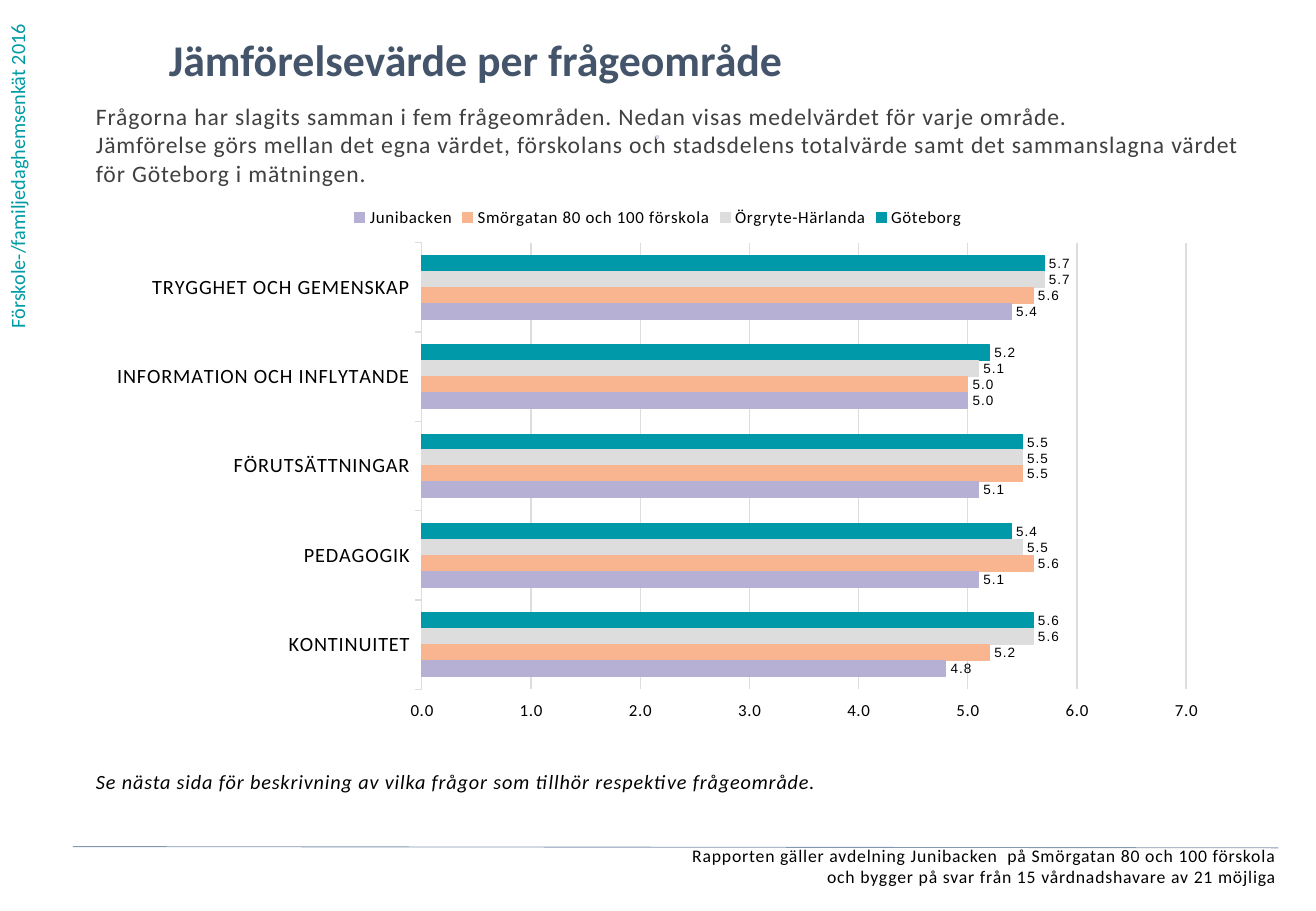
from dataclasses import dataclass

from lxml.etree import SubElement
from pptx import Presentation
from pptx.chart.data import CategoryChartData
from pptx.dml.color import RGBColor
from pptx.enum.chart import (XL_CHART_TYPE, XL_LABEL_POSITION, XL_LEGEND_POSITION,
                             XL_TICK_LABEL_POSITION, XL_TICK_MARK)
from pptx.enum.shapes import MSO_CONNECTOR
from pptx.enum.text import MSO_ANCHOR, PP_ALIGN
from pptx.oxml import parse_xml
from pptx.oxml.ns import nsdecls, qn
from pptx.util import Inches, Pt


@dataclass(frozen=True)
class Theme:
    font: str = "Calibri"
    label_font: str = "Arial"
    title: str = "44546A"
    body: str = "404040"
    black: str = "000000"
    accent: str = "009BA4"
    dot: str = "D2D9E2"
    rule: str = "8497B0"
    grid: str = "DDDDDD"
    title_size: float = 26
    intro_size: float = 14
    text_size: float = 12
    footer_size: float = 10.5
    chart_size: float = 10
    label_size: float = 8
    spacing: int = 50  # hundredths of a point


THEME = Theme()
PAGE_WIDTH, PAGE_HEIGHT = Inches(10.83), Inches(7.5)
TEXT_LEFT = 7.29

AREAS = ["TRYGGHET OCH GEMENSKAP", "INFORMATION OCH INFLYTANDE",
         "FÖRUTSÄTTNINGAR", "PEDAGOGIK", "KONTINUITET"]
SERIES = [
    ("Göteborg", "0099AA", (5.7, 5.2, 5.5, 5.4, 5.6)),
    ("Örgryte-Härlanda", "DDDDDD", (5.7, 5.1, 5.5, 5.5, 5.6)),
    ("Smörgatan 80 och 100 förskola", "F9B590", (5.6, 5.0, 5.5, 5.6, 5.2)),
    ("Junibacken", "B6B1D4", (5.4, 5.0, 5.1, 5.1, 4.8)),
]


def across(percent):
    return round(PAGE_WIDTH * percent / 100)


def down(percent):
    return round(PAGE_HEIGHT * percent / 100)


def place(left, top, width, height):
    """Turn percentages of the page into lengths."""
    return across(left), down(top), across(width), down(height)


def style_font(font, size, color=THEME.black, name=THEME.font):
    font.name = name
    font.size = Pt(size)
    font.color.rgb = RGBColor.from_string(color)


def add_text(page, area, lines, size, color, bold=False, italic=False,
             align=PP_ALIGN.LEFT, spacing=THEME.spacing):
    box = page.shapes.add_textbox(*place(*area))
    frame = box.text_frame
    frame.word_wrap = True
    frame.vertical_anchor = MSO_ANCHOR.TOP
    frame.margin_left = frame.margin_right = 0
    frame.margin_top = frame.margin_bottom = 0
    for index, line in enumerate(lines):
        para = frame.add_paragraph() if index else frame.paragraphs[0]
        para.alignment = align
        span = para.add_run()
        span.text = line
        style_font(span.font, size, color)
        span.font.bold, span.font.italic = bold, italic
        if spacing:
            span.font._element.set("spc", str(spacing))
    return box


def add_side_label(page, area, line):
    box = add_text(page, area, [line], THEME.text_size, THEME.accent, spacing=0)
    box.text_frame._txBody.bodyPr.set("vert", "vert270")


def add_rule(page, left, top, right, bottom):
    rule = page.shapes.add_connector(MSO_CONNECTOR.STRAIGHT, across(left), down(top),
                                     across(right), down(bottom))
    rule.line.color.rgb = RGBColor.from_string(THEME.rule)
    rule.line.width = Pt(0.5)
    SubElement(rule._element.spPr, qn("a:effectLst"))


def style_series(series, color):
    rgb = RGBColor.from_string(color)
    series.format.fill.solid()
    series.format.fill.fore_color.rgb = rgb
    series.format.line.color.rgb = rgb
    series.format.line.width = Pt(0.75)
    labels = series.data_labels
    labels.show_value = True
    labels.number_format = "0.0;0.0"
    labels.number_format_is_linked = False
    labels.position = XL_LABEL_POSITION.OUTSIDE_END
    style_font(labels.font, THEME.label_size, name=THEME.label_font)


def style_axes(chart):
    grid_color = RGBColor.from_string(THEME.grid)
    areas, values = chart.category_axis, chart.value_axis
    areas.reverse_order = True
    areas.format.line.color.rgb = grid_color
    areas.format.line.width = Pt(0.75)
    style_font(areas.tick_labels.font, THEME.text_size)
    values.minimum_scale, values.maximum_scale, values.major_unit = 0, 7, 1
    values.tick_label_position = XL_TICK_LABEL_POSITION.HIGH  # below the bars
    values.format.line.fill.background()
    values.major_gridlines.format.line.color.rgb = grid_color
    values.major_gridlines.format.line.width = Pt(0.75)
    values.tick_labels.number_format = "0.0;0.0"
    values.tick_labels.number_format_is_linked = False
    style_font(values.tick_labels.font, THEME.chart_size)
    for axis in (areas, values):
        axis.major_tick_mark = XL_TICK_MARK.OUTSIDE
        axis.minor_tick_mark = XL_TICK_MARK.NONE


def set_plot_area(chart, **shares):
    """Fix the inner plot area as shares of the chart."""
    plot_area = chart.element.find(".//" + qn("c:plotArea"))
    for old in plot_area.findall(qn("c:layout")):
        plot_area.remove(old)
    settings = {"layoutTarget": "inner", "xMode": "edge", "yMode": "edge", **shares}
    parts = "".join(f'<c:{key} val="{value}"/>' for key, value in settings.items())
    plot_area.insert(0, parse_xml(
        f'<c:layout {nsdecls("c")}><c:manualLayout>{parts}</c:manualLayout></c:layout>'))


def add_bar_chart(page, area):
    data = CategoryChartData(number_format="0.0")
    data.categories = AREAS
    for name, _, values in SERIES:
        data.add_series(name, values)
    chart = page.shapes.add_chart(XL_CHART_TYPE.BAR_CLUSTERED, *place(*area), data).chart
    chart.has_title = False
    style_font(chart.font, THEME.chart_size)
    plot = chart.plots[0]
    plot.vary_by_categories = False
    plot.gap_width, plot.overlap = 162, 0
    for series, (_, color, _) in zip(plot.series, SERIES):
        style_series(series, color)
    style_axes(chart)
    chart.has_legend = True
    chart.legend.position = XL_LEGEND_POSITION.TOP
    chart.legend.include_in_layout = False
    style_font(chart.legend.font, THEME.chart_size)
    set_plot_area(chart, x=0.29, y=0.09, w=0.68, h=0.83)
    for properties in chart.element.iter(qn("a:defRPr")):
        properties.set("spc", str(THEME.spacing))


def main():
    deck = Presentation()
    deck.slide_width, deck.slide_height = PAGE_WIDTH, PAGE_HEIGHT
    page = deck.slides.add_slide(deck.slide_layouts[6])

    # Side label, title and introduction
    add_side_label(page, (0.37, 0, 1.9, 36.05), "Förskole-/familjedaghemsenkät 2016")
    add_text(page, (12.83, 3.6, 77, 7.6), ["Jämförelsevärde per frågeområde"],
             THEME.title_size, THEME.title, bold=True, spacing=0)
    add_text(page, (TEXT_LEFT, 11.2, 88, 9.7),
             ["Frågorna har slagits samman i fem frågeområden. "
              "Nedan visas medelvärdet för varje område.",
              "Jämförelse görs mellan det egna värdet, förskolans och stadsdelens "
              "totalvärde samt det sammanslagna värdet för Göteborg i mätningen."],
             THEME.intro_size, THEME.body)
    add_text(page, (35.73, 13.6, 28.44, 5.2), ["⋅"], THEME.text_size, THEME.dot,
             bold=True, align=PP_ALIGN.CENTER)

    # Mean value per area, with the pointer to the next page
    add_bar_chart(page, (TEXT_LEFT, 21.33, 85.41, 59.07))
    add_text(page, (TEXT_LEFT, 84.4, 85.41, 3.5),
             ["Se nästa sida för beskrivning av vilka frågor som tillhör "
              "respektive frågeområde."], THEME.text_size, THEME.black, italic=True)

    # Footer
    add_text(page, (1.11, 92.75, 95.9, 5.73),
             ["Rapporten gäller avdelning Junibacken  på Smörgatan 80 och 100 förskola",
              "och bygger på svar från 15 vårdnadshavare av 21 möjliga"],
             THEME.footer_size, THEME.black, align=PP_ALIGN.RIGHT)
    add_rule(page, 5.54, 92.93, 97.14, 93.07)

    deck.save("out.pptx")


if __name__ == "__main__":
    main()
